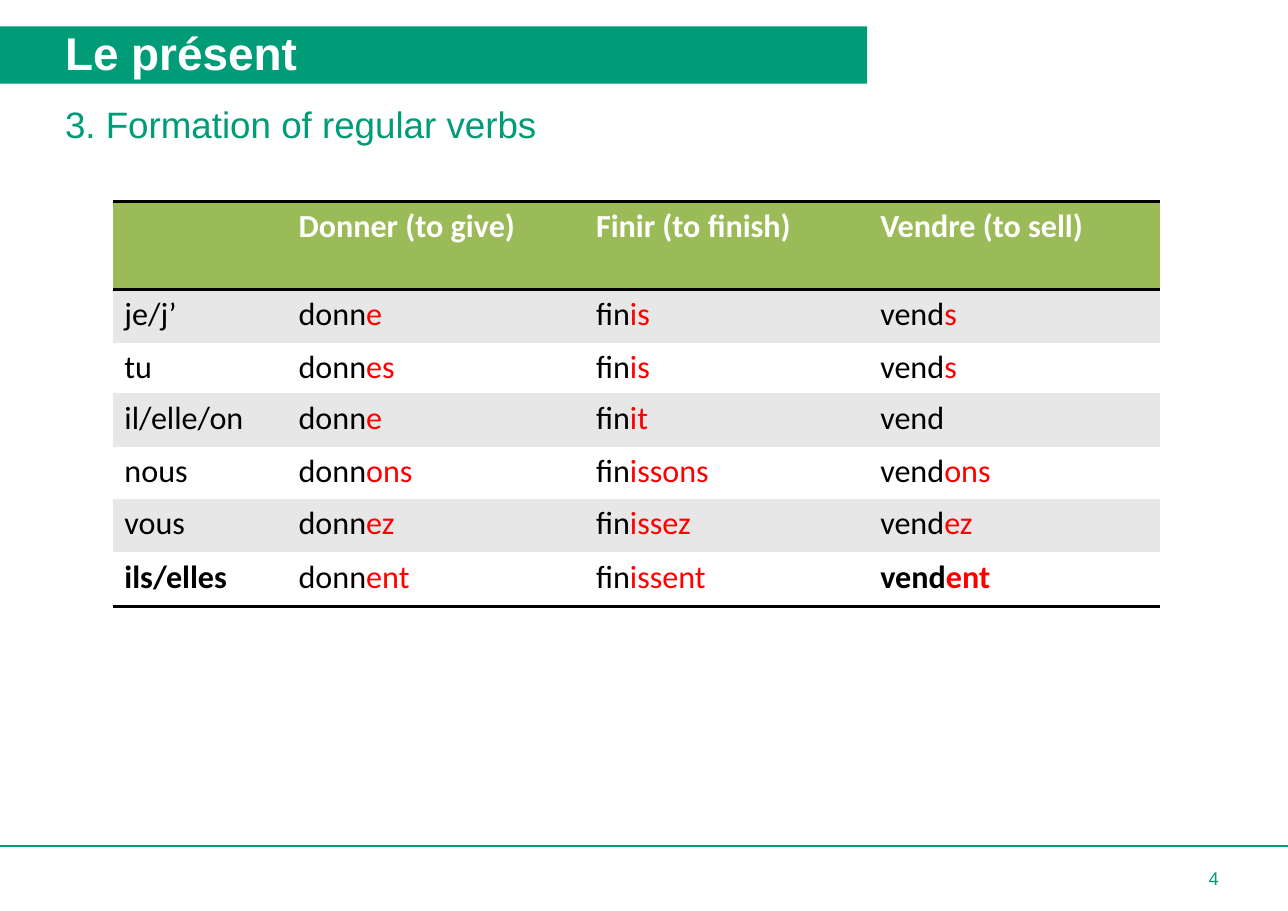
from lxml.etree import SubElement as Sub
from pptx import Presentation
from pptx.dml.color import RGBColor as RGB
from pptx.enum.shapes import MSO_CONNECTOR as Link
from pptx.enum.text import MSO_ANCHOR as Anchor, MSO_AUTO_SIZE as Auto, PP_ALIGN as Align
from pptx.oxml.ns import qn
from pptx.util import Inches, Pt

WIDE, HIGH = Inches(11.69), Inches(8.27)
GREEN, LIME, GREY = "009C78", "9BBB59", "E7E7E7"
WHITE, BLACK, RED = "FFFFFF", "000000", "FF0000"
PLAIN = "{2D5ABB26-0587-4C30-8999-92F81FD0307C}"  # no style, no grid

# Table: widths and heights are percent of the slide
COLS = [13.52, 23.1, 22.07, 22.58]
ROWS = [9.67, 5.8, 5.44, 5.92, 5.68, 5.92, 5.92]
HEADS = ["", "Donner (to give)", "Finir (to finish)", "Vendre (to sell)"]
STEMS = ["donn", "fin", "vend"]
FORMS = [
    ("je/j’", "e", "is", "s"),
    ("tu", "es", "is", "s"),
    ("il/elle/on", "e", "it", ""),
    ("nous", "ons", "issons", "ons"),
    ("vous", "ez", "issez", "ez"),
    ("ils/elles", "ent", "issent", "ent"),
]


def tone(code):
    return RGB.from_string(code)


def across(part):
    return int(WIDE * part / 100)


def down(part):
    return int(HIGH * part / 100)


def paint(item, code):
    item.fill.solid()
    item.fill.fore_color.rgb = tone(code)


def write(para, text, size=21, font="Calibri", color=BLACK, bold=False):
    run = para.add_run()
    run.text = text
    face = run.font
    face.size, face.name, face.bold = Pt(size), font, bold
    face.color.rgb = tone(color)


def label(box, text, x, y, w, h, inset=(0, 0, 0, 0.05), **form):
    """Place a text holder and fill it with one indented line."""
    box.left, box.top = across(x), down(y)
    box.width, box.height = across(w), down(h)
    frame = box.text_frame
    frame.word_wrap, frame.auto_size = True, Auto.NONE
    frame.vertical_anchor = Anchor.MIDDLE
    (frame.margin_left, frame.margin_top,
     frame.margin_right, frame.margin_bottom) = map(Inches, inset)
    para = frame.paragraphs[0]
    props = para._p.get_or_add_pPr()
    props.set("marL", str(Inches(0.59)))
    props.set("indent", "0")
    Sub(props, qn("a:buNone"))
    para.alignment, para.space_before = Align.LEFT, Pt(0)
    write(para, text, font="Arial", **form)


def rule(slide, y):
    line = slide.shapes.add_connector(Link.STRAIGHT, 0, down(y), WIDE, down(y))
    line.line.color.rgb, line.line.width = tone(GREEN), Pt(0.75)
    Sub(line._element.spPr, qn("a:effectLst"))


def edge(cell, *sides):
    props = cell._tc.get_or_add_tcPr()
    for spot, side in enumerate(sides):
        line = props.makeelement(qn("a:" + side), {"w": str(Pt(2))})
        fill = Sub(line, qn("a:solidFill"))
        Sub(fill, qn("a:srgbClr"), val=BLACK)
        props.insert(spot, line)


def verbs(slide):
    frame = slide.shapes.add_table(
        len(ROWS), len(COLS), across(8.81), down(22.13),
        across(sum(COLS)), down(sum(ROWS)))
    table = frame.table
    table._tbl.tblPr.find(qn("a:tableStyleId")).text = PLAIN
    for col, part in zip(table.columns, COLS):
        col.width = across(part)
    for row, part in zip(table.rows, ROWS):
        row.height = down(part)

    # Header
    for col, text in enumerate(HEADS):
        cell = table.cell(0, col)
        paint(cell, LIME)
        edge(cell, "lnT", "lnB")
        if text:
            write(cell.text_frame.paragraphs[0], text, color=WHITE, bold=True)

    # Pronouns, then stems with red endings
    last = len(FORMS)
    for row, (who, *ends) in enumerate(FORMS, 1):
        for col, (stem, end) in enumerate([(who, ""), *zip(STEMS, ends)]):
            cell = table.cell(row, col)
            paint(cell, GREY if row % 2 else WHITE)
            para = cell.text_frame.paragraphs[0]
            bold = row == last and col in (0, len(STEMS))
            write(para, stem, bold=bold)
            if end:
                write(para, end, color=RED, bold=bold)
            if row == last:
                edge(cell, "lnB")


def main():
    deck = Presentation()
    deck.slide_width, deck.slide_height = WIDE, HIGH
    slide = deck.slides.add_slide(deck.slide_layouts[1])
    title, body = slide.placeholders

    # Footer
    number = slide.shapes.add_textbox(0, 0, 0, 0)
    label(number, "4", 87.94, 92.87, 12.06, 7.13,
          inset=(0.1, 0.05, 0.1, 0.05), size=12, color=GREEN)
    rule(slide, 92.87)

    verbs(slide)

    # Headings
    paint(title, GREEN)
    label(title, "Le présent", 0, 2.9, 67.32, 6.29,
          size=30, color=WHITE, bold=True)
    label(body, "3. Formation of regular verbs", 0, 10.76, 100, 6.17,
          size=24, color=GREEN)
    deck.save("out.pptx")


if __name__ == "__main__":
    main()
